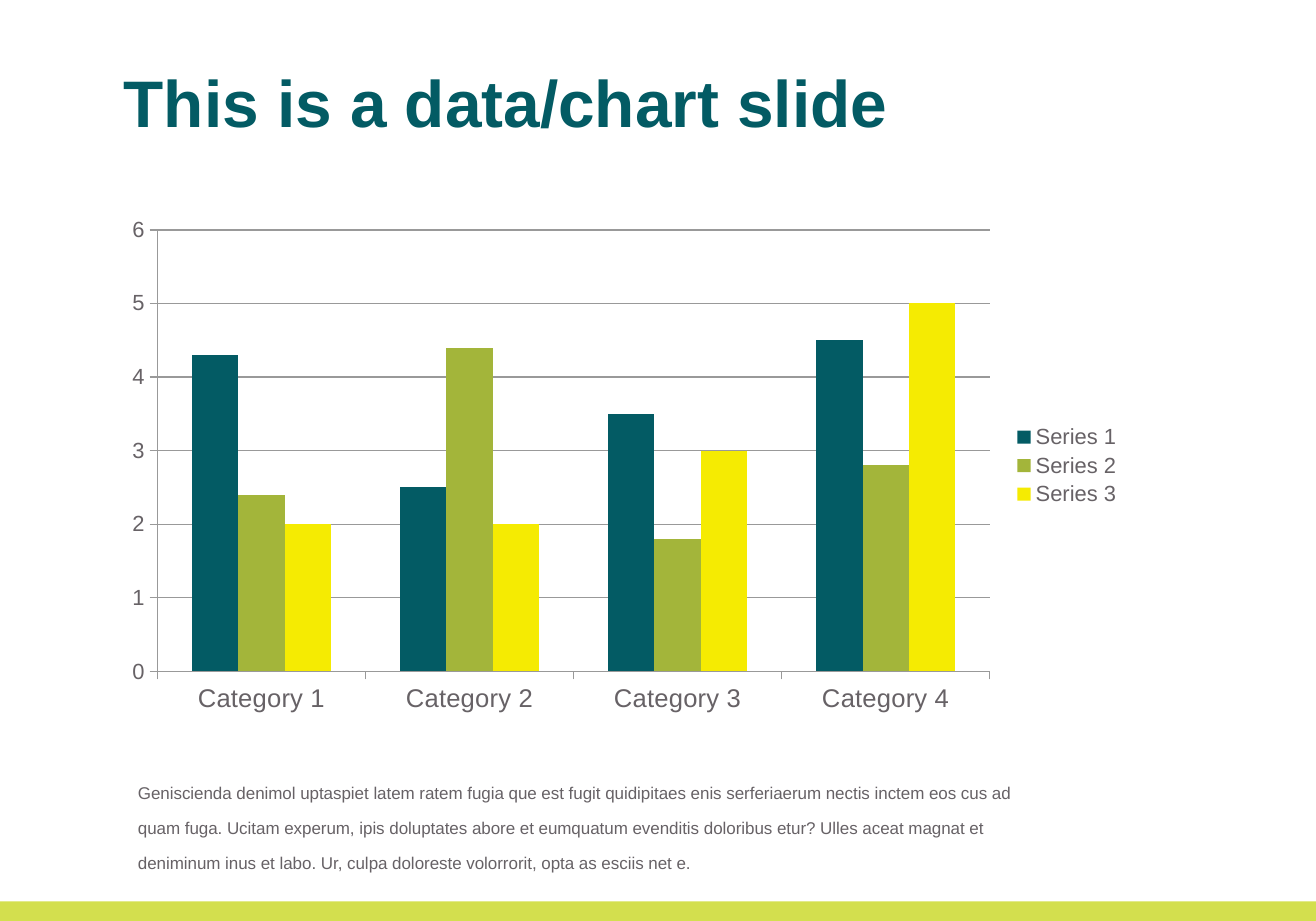
"""Build a data slide with a title, a column chart, a note and a footer band."""
from dataclasses import dataclass

from pptx import Presentation
from pptx.chart.data import CategoryChartData as Data
from pptx.dml.color import RGBColor as Rgb
from pptx.enum.chart import XL_CHART_TYPE as Kind, XL_LEGEND_POSITION as Side
from pptx.enum.chart import XL_TICK_MARK as Tick
from pptx.enum.shapes import MSO_SHAPE as Form
from pptx.enum.text import MSO_ANCHOR as Anchor, PP_ALIGN as Align
from pptx.util import Inches, Pt


@dataclass(frozen=True)
class Theme:
    font: str = "Arial"
    teal: str = "035B64"
    green: str = "A3B53A"
    gold: str = "F5EB02"
    lime: str = "D3DF4E"
    gray: str = "676266"
    rule: str = "999999"
    head: int = 36
    note: int = 16
    base: int = 18
    cats: int = 14
    tick: int = 12


def style(font, size, color, bold=False):
    font.name = theme.font
    font.size = Pt(size)
    font.bold = bold
    font.color.rgb = Rgb.from_string(color)


def place(*box):
    return [Inches(part) for part in box]


theme = Theme()
wide, high, band = 10, 7, 0.15
deck = Presentation()
deck.slide_width, deck.slide_height = place(wide, high)
slide = deck.slides.add_slide(deck.slide_layouts[5])
shapes = slide.shapes

title = shapes.title
title.left, title.top, title.width, title.height = place(0.84, 0.42, 8.65, 0.88)
frame = title.text_frame
frame.text = "This is a data/chart slide"
frame.vertical_anchor = Anchor.TOP
frame.paragraphs[0].alignment = Align.LEFT
style(frame.paragraphs[0].runs[0].font, theme.head, theme.teal, True)

series = [
    ("Series 1", (4.3, 2.5, 3.5, 4.5), theme.teal),
    ("Series 2", (2.4, 4.4, 1.8, 2.8), theme.green),
    ("Series 3", (2, 2, 3, 5), theme.gold),
]
data = Data()
data.categories = [f"Category {num}" for num in range(1, 5)]
for name, vals, color in series:
    data.add_series(name, vals)
chart = shapes.add_chart(
    Kind.COLUMN_CLUSTERED, *place(0.85, 1.58, 7.77, 3.92), data
).chart
chart.has_title = False
style(chart.font, theme.base, theme.gray)

plot = chart.plots[0]
plot.gap_width = 150
plot.vary_by_categories = False
for bars, (name, vals, color) in zip(plot.series, series):
    bars.format.fill.solid()
    bars.format.fill.fore_color.rgb = Rgb.from_string(color)

axes = [(chart.category_axis, theme.cats), (chart.value_axis, theme.tick)]
for axis, size in axes:
    axis.major_tick_mark = Tick.OUTSIDE
    axis.minor_tick_mark = Tick.NONE
    style(axis.tick_labels.font, size, theme.gray)
chart.value_axis.has_major_gridlines = True
grid = chart.value_axis.major_gridlines
for part in (chart.category_axis, chart.value_axis, grid):
    part.format.line.width = Pt(0.75)
    part.format.line.color.rgb = Rgb.from_string(theme.rule)

chart.has_legend = True
chart.legend.position = Side.RIGHT
chart.legend.include_in_layout = False
style(chart.legend.font, theme.tick, theme.gray)

foot = shapes.add_shape(Form.RECTANGLE, *place(0, high - band, wide, band))
foot.shadow.inherit = False
foot.fill.solid()
foot.fill.fore_color.rgb = Rgb.from_string(theme.lime)
foot.line.fill.background()

note = shapes.add_textbox(*place(0.95, 5.87, 7, 0.64)).text_frame
note.word_wrap = True
note.text = (
    "Geniscienda denimol uptaspiet latem ratem fugia que est fugit quidipitaes "
    "enis serferiaerum nectis inctem eos cus ad quam fuga. Ucitam experum, ipis "
    "doluptates abore et eumquatum evenditis doloribus etur? Ulles aceat magnat "
    "et deniminum inus et labo. Ur, culpa doloreste volorrorit, opta as esciis "
    "net e."
)
run = note.paragraphs[0].runs[0]
style(run.font, theme.note, theme.gray)
run._r.get_or_add_rPr().set("baseline", "30000")

deck.save("out.pptx")
